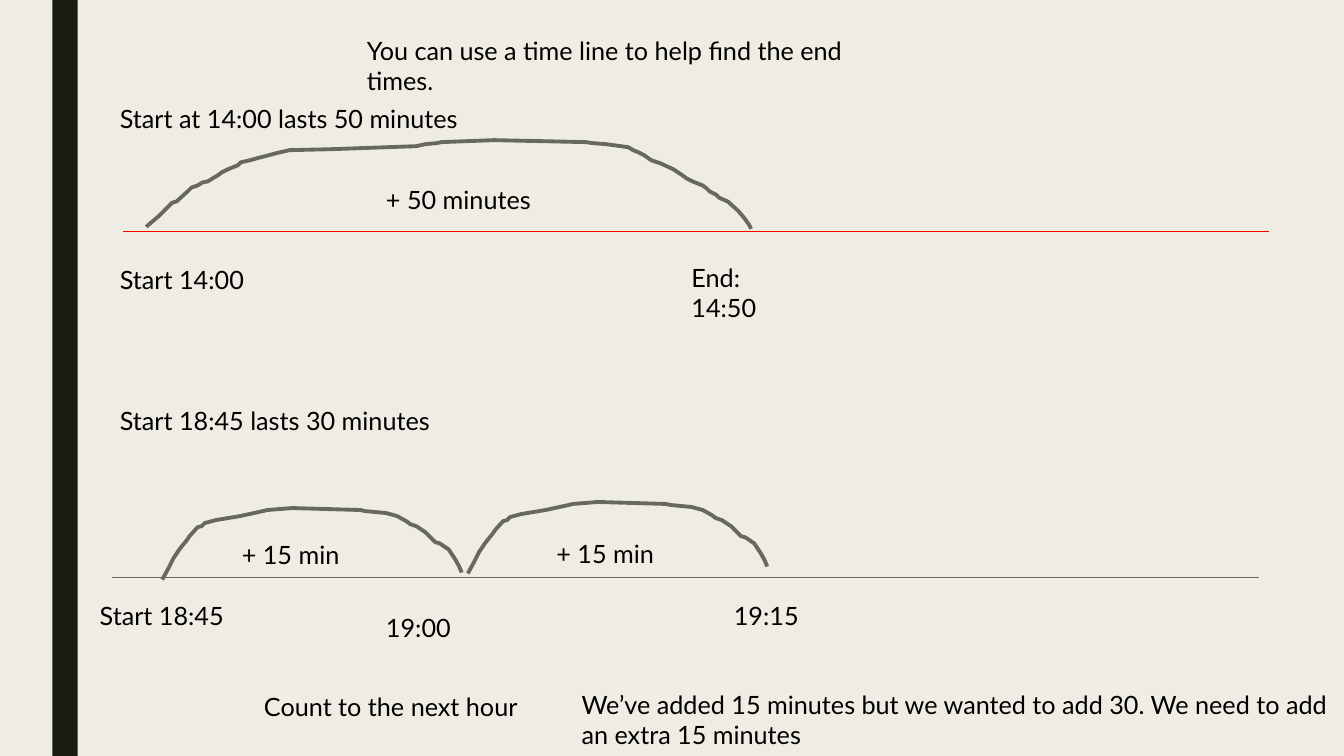
from lxml.etree import SubElement
from pptx import Presentation
from pptx.dml.color import RGBColor
from pptx.enum.shapes import MSO_CONNECTOR, MSO_SHAPE
from pptx.oxml.ns import qn
from pptx.util import Inches, Pt

CREAM = RGBColor(0xEF, 0xED, 0xE3)
DARK = RGBColor(0x19, 0x1B, 0x0E)
BLACK = RGBColor(0, 0, 0)
RED = RGBColor(0xFF, 0, 0)
GREY = RGBColor(0x68, 0x68, 0x63)

# Hand-drawn jumps, in hundredths of an inch from their top left corner
LONG_JUMP = [
    (0, 86), (13, 75), (23, 65), (26, 62), (30, 61), (41, 51), (45, 47),
    (51, 45), (56, 42), (61, 41), (71, 35), (75, 32), (81, 29), (91, 25),
    (94, 22), (103, 20), (110, 18), (129, 13), (142, 10), (184, 9),
    (268, 6), (277, 4), (288, 3), (293, 2), (345, 0), (436, 2), (443, 3),
    (456, 4), (478, 7), (483, 10), (488, 12), (494, 15), (501, 20),
    (510, 23), (523, 29), (532, 35), (536, 38), (542, 41), (552, 45),
    (556, 48), (559, 51), (565, 54), (568, 57), (577, 61), (587, 70),
    (593, 77), (598, 84), (600, 88),
]
SHORT_JUMP = [
    (0, 71), (6, 60), (11, 50), (17, 41), (25, 31), (27, 28), (35, 19),
    (39, 18), (42, 15), (53, 12), (77, 8), (91, 5), (100, 3), (104, 2),
    (129, 0), (197, 2), (201, 3), (222, 5), (233, 8), (242, 13), (246, 16),
    (252, 18), (261, 24), (268, 31), (271, 34), (275, 35), (284, 41),
    (290, 50), (294, 57), (297, 64),
]


def add_text(slide, left, top, width, words, height=0.4):
    box = slide.shapes.add_textbox(
        Inches(left), Inches(top), Inches(width), Inches(height))
    box.text_frame.word_wrap = True
    run = box.text_frame.paragraphs[0].add_run()
    run.text = words
    run.font.size = Pt(18)
    run.font.name = "Lato"
    run.font.color.rgb = BLACK


def add_axis(slide, left, top, width, color):
    line = slide.shapes.add_connector(
        MSO_CONNECTOR.STRAIGHT, Inches(left), Inches(top),
        Inches(left + width), Inches(top))
    line.line.color.rgb = color
    line.line.width = Pt(0.5)
    SubElement(line._element.spPr, qn("a:effectLst"))


def add_jump(slide, left, top, points):
    """Draw an open arc whose top left corner is at left, top."""
    (x, y), *rest = points
    pen = slide.shapes.build_freeform(x, y, scale=Inches(0.01))
    pen.add_line_segments(rest, close=False)
    arc = pen.convert_to_shape(Inches(left), Inches(top))
    arc.fill.background()
    arc.line.color.rgb = GREY
    arc.line.width = Pt(2.75)
    arc.shadow.inherit = False


def add_frame(slide, height):
    """Set the background and the dark bar at the left."""
    slide.background.fill.solid()
    slide.background.fill.fore_color.rgb = CREAM
    bar = slide.shapes.add_shape(
        MSO_SHAPE.RECTANGLE, Inches(0.52), 0, Inches(0.25), height)
    bar.fill.solid()
    bar.fill.fore_color.rgb = DARK
    bar.line.fill.background()
    bar.shadow.inherit = False


def add_first(slide, left, top):
    """Time line with one jump of 50 minutes."""
    add_text(slide, left, top, 3.65, "Start at 14:00 lasts 50 minutes")
    add_axis(slide, left + 0.13, top + 1.32, 11.37, RED)
    add_jump(slide, left + 0.36, top + 0.41, LONG_JUMP)
    add_text(slide, left + 2.64, top + 0.8, 1.8, "+ 50 minutes")
    add_text(slide, left, top + 1.59, 1.55, "Start 14:00")
    add_text(slide, left + 5.67, top + 1.57, 1.2, "End: 14:50", 0.71)


def add_second(slide, left, top):
    """Time line with two jumps of 15 minutes."""
    add_text(slide, left, top, 3.4, "Start 18:45 lasts 30 minutes")
    add_axis(slide, left + 0.02, top + 1.76, 11.38, GREY)
    for x, y in ((0.52, 1.07), (3.55, 1.01)):
        add_jump(slide, left + x, top + y, SHORT_JUMP)
    for x, y, width, words in (
            (1.21, 1.33, 1.25, "+ 15 min"),
            (4.33, 1.32, 1.25, "+ 15 min"),
            (-0.2, 1.94, 1.55, "Start 18:45"),
            (2.64, 2.06, 0.95, "19:00"),
            (6.09, 1.94, 0.95, "19:15"),
            (1.43, 2.84, 2.8, "Count to the next hour")):
        add_text(slide, left + x, top + y, width, words)
    add_text(slide, left + 4.58, top + 2.82, 7.67,
             "We’ve added 15 minutes but we wanted to add 30. "
             "We need to add an extra 15 minutes", 0.71)


def main():
    deck = Presentation()
    deck.slide_width, deck.slide_height = Inches(13.33), Inches(7.5)
    slide = deck.slides.add_slide(deck.slide_layouts[6])
    add_frame(slide, deck.slide_height)
    add_text(slide, 3.54, 0.3, 5.4,
             "You can use a time line to help find the end times.", 0.71)
    add_first(slide, 1.09, 0.98)
    add_second(slide, 1.09, 3.97)
    deck.save("out.pptx")


if __name__ == "__main__":
    main()
